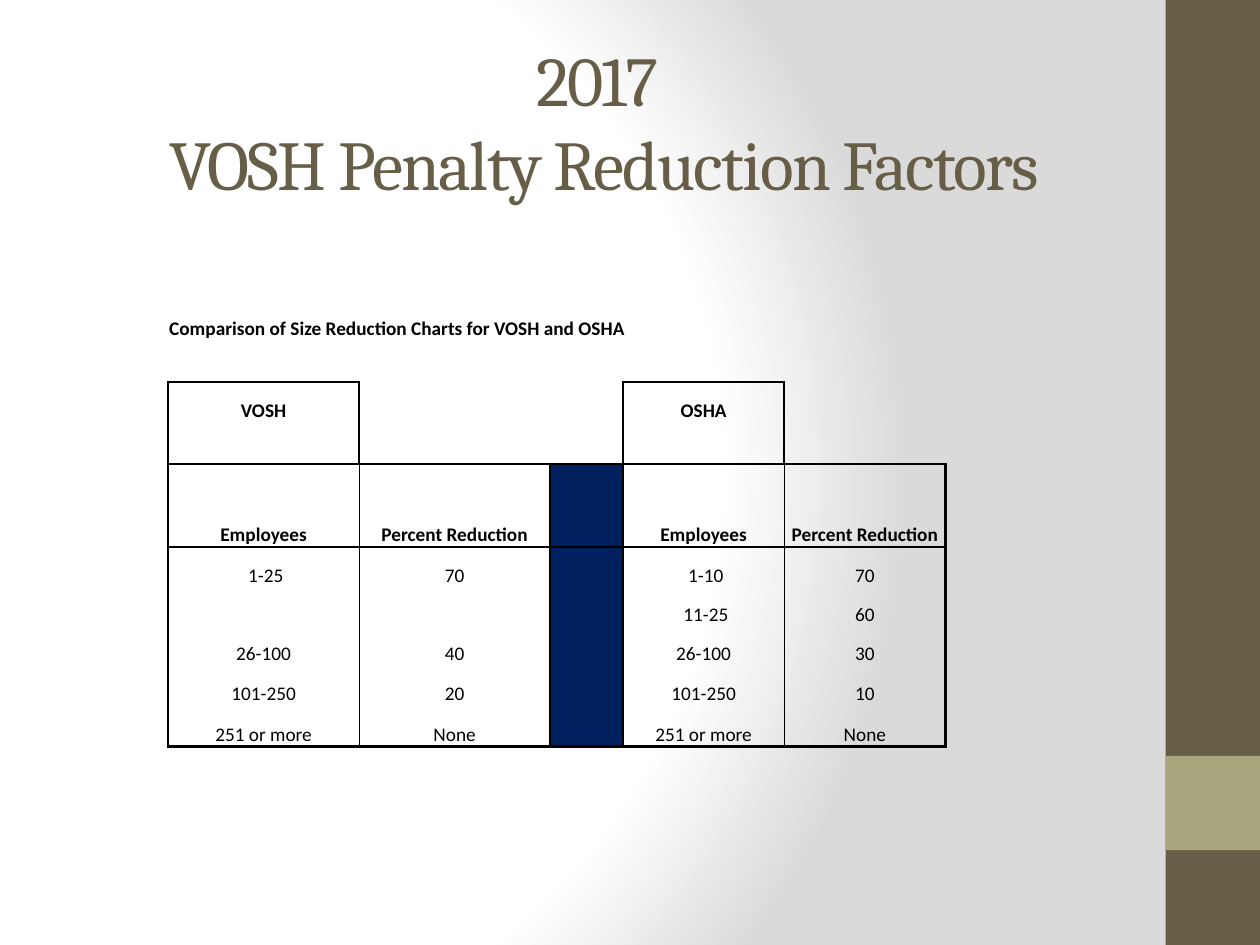
"""Build the slide comparing VOSH and OSHA penalty reduction factors."""

from lxml.etree import SubElement
from pptx import Presentation
from pptx.dml.color import RGBColor
from pptx.enum.shapes import MSO_SHAPE
from pptx.enum.text import MSO_ANCHOR, PP_ALIGN
from pptx.oxml import parse_xml
from pptx.oxml.ns import nsdecls, qn
from pptx.util import Cm, Pt

BROWN = RGBColor(0x67, 0x5E, 0x47)
OLIVE = RGBColor(0xA9, 0xA5, 0x7C)
NAVY = RGBColor(0x00, 0x20, 0x60)
BLACK = RGBColor(0, 0, 0)
WHITE = RGBColor(0xFF, 0xFF, 0xFF)
GREY = RGBColor(0xDA, 0xDA, 0xDA)

THICK, THIN = 1.5, 0.5
NO_GRID_STYLE = "{2D5ABB26-0587-4C30-8999-92F81FD0307C}"
COLUMN_WIDTHS = [3.85, 3.85, 1.47, 3.25, 3.25]
ROW_HEIGHTS = [0.79, 0.79, 0.83, 0.83, 0.83, 1.66, 0.83, 0.79, 0.79, 0.79, 0.83, 0.83]
CAPTION_ROW, AGENCY_ROW, HEADER_ROW, LAST_ROW = 1, 3, 5, 10
DIVIDER_COLUMN = 2
CELL_TEXTS = {
    CAPTION_ROW: ["Comparison of Size Reduction Charts for VOSH and OSHA"],
    AGENCY_ROW: ["VOSH", "", "", "OSHA", ""],
    HEADER_ROW: ["Employees", "Percent Reduction", "", "Employees", "Percent Reduction"],
    6: [" 1-25", "70", "", " 1-10", "70"],
    7: ["", "", "", " 11-25", "60"],
    8: ["26-100", "40", "", "26-100", "30"],
    9: ["101-250", "20", "", "101-250", "10"],
    LAST_ROW: ["251 or more", "None", "", "251 or more", "None"],
}


def vertical_rule(row, edge):
    """Return the line width at a column edge within a row."""
    if AGENCY_ROW <= row < HEADER_ROW:
        return THICK if edge in (0, 1, 3, 4) else 0
    if HEADER_ROW <= row <= LAST_ROW:
        return THIN if edge in (1, 4) else THICK
    return 0


def horizontal_rule(edge, column):
    """Return the line width at a row edge within a column."""
    if edge == AGENCY_ROW:
        return THICK if column in (0, 3) else 0
    return THICK if edge in (HEADER_ROW, HEADER_ROW + 1, LAST_ROW + 1) else 0


class SlideBuilder:
    """Hold the style and the current slide."""

    title_font, body_font = "Cambria", "Calibri"
    title_size, body_size = Pt(40), Pt(11)

    def __init__(self, slide):
        """Keep the slide to draw on."""
        self.slide = slide

    def background(self, stops, focus):
        """Fill the background with a circular gradient."""
        stop_xml = "".join(
            f'<a:gs pos="{position * 1000}"><a:srgbClr val="{color}"/></a:gs>'
            for position, color in stops
        )
        focus_xml = " ".join(f'{side}="{value * 1000}"' for side, value in zip("ltrb", focus))
        self.slide._element.cSld.insert(0, parse_xml(
            f'<p:bg {nsdecls("p", "a")}><p:bgPr><a:gradFill rotWithShape="1">'
            f'<a:gsLst>{stop_xml}</a:gsLst>'
            f'<a:path path="circle"><a:fillToRect {focus_xml}/></a:path>'
            '</a:gradFill><a:effectLst/></p:bgPr></p:bg>'
        ))

    def rectangle(self, left, top, width, height, color):
        """Add a plain filled rectangle."""
        shape = self.slide.shapes.add_shape(
            MSO_SHAPE.RECTANGLE, Cm(left), Cm(top), Cm(width), Cm(height))
        shape.shadow.inherit = False
        shape.fill.solid()
        shape.fill.fore_color.rgb = color
        shape.line.fill.background()

    def run(self, paragraph, text, font_name, size, color, bold=False):
        """Add a styled run to a paragraph."""
        run = paragraph.add_run()
        run.text = text
        run.font.name = font_name
        run.font.size = size
        run.font.color.rgb = color
        run.font.bold = bold
        return run

    def title(self, left, top, width, height, lines):
        """Add the centred title with tightened letters."""
        shape = self.slide.shapes.add_textbox(Cm(left), Cm(top), Cm(width), Cm(height))
        frame = shape.text_frame
        frame.word_wrap = True
        frame.vertical_anchor = MSO_ANCHOR.BOTTOM
        paragraph = frame.paragraphs[0]
        paragraph.alignment = PP_ALIGN.CENTER
        for index, line in enumerate(lines):
            if index:
                paragraph.add_line_break()
            run = self.run(paragraph, line, self.title_font, self.title_size, BROWN)
            run.font._element.set("spc", "-100")

    def border(self, cell, side, width):
        """Draw one cell border, or clear it when the width is zero."""
        line = SubElement(cell._tc.get_or_add_tcPr(), qn(f"a:ln{side}"))
        if width:
            line.set("w", str(Pt(width)))
            fill = SubElement(line, qn("a:solidFill"))
            SubElement(fill, qn("a:srgbClr")).set("val", str(BLACK))
        else:
            SubElement(line, qn("a:noFill"))

    def cell(self, table, row, column):
        """Style one table cell and write its text."""
        cell = table.cell(row, column)
        cell.margin_left = cell.margin_right = cell.margin_top = cell.margin_bottom = 0
        cell.vertical_anchor = MSO_ANCHOR.BOTTOM
        self.border(cell, "L", vertical_rule(row, column))
        self.border(cell, "R", vertical_rule(row, column + 1))
        self.border(cell, "T", horizontal_rule(row, column))
        self.border(cell, "B", horizontal_rule(row + 1, column))
        if column == DIVIDER_COLUMN and HEADER_ROW <= row <= LAST_ROW:
            cell.fill.solid()
            cell.fill.fore_color.rgb = NAVY
        else:
            cell.fill.background()
        texts = CELL_TEXTS.get(row, [])
        if column < len(texts) and texts[column]:
            cell.margin_left = cell.margin_right = cell.margin_top = Cm(0.02)
            paragraph = cell.text_frame.paragraphs[0]
            paragraph.alignment = PP_ALIGN.LEFT if row == CAPTION_ROW else PP_ALIGN.CENTER
            self.run(paragraph, texts[column], self.body_font, self.body_size, BLACK,
                     bold=row <= HEADER_ROW)

    def table(self, left, top):
        """Add the comparison table."""
        frame = self.slide.shapes.add_table(
            len(ROW_HEIGHTS), len(COLUMN_WIDTHS), Cm(left), Cm(top),
            Cm(sum(COLUMN_WIDTHS)), Cm(sum(ROW_HEIGHTS)))
        table = frame.table
        table.first_row = table.horz_banding = False
        table._tbl.tblPr.find(qn("a:tableStyleId")).text = NO_GRID_STYLE
        for column, width in zip(table.columns, COLUMN_WIDTHS):
            column.width = Cm(width)
        for row, height in zip(table.rows, ROW_HEIGHTS):
            row.height = Cm(height)
        for row in range(len(ROW_HEIGHTS)):
            for column in range(len(COLUMN_WIDTHS)):
                self.cell(table, row, column)
        table.cell(CAPTION_ROW, 0).merge(table.cell(CAPTION_ROW, len(COLUMN_WIDTHS) - 1))


def main():
    """Build and save the presentation."""
    presentation = Presentation()
    presentation.slide_width, presentation.slide_height = Cm(25.4), Cm(19.05)
    builder = SlideBuilder(presentation.slides.add_slide(presentation.slide_layouts[6]))
    builder.background([(0, WHITE), (75, WHITE), (100, GREY)], (20, 50, 100, 50))
    builder.rectangle(23.5, 0, 1.9, 19.05, BROWN)
    builder.rectangle(23.5, 15.24, 1.9, 1.9, OLIVE)
    builder.title(1.7, 0.85, 20.96, 3.39, ["2017 ", "VOSH Penalty Reduction Factors"])
    builder.table(3.39, 5.29)
    presentation.save("out.pptx")


if __name__ == "__main__":
    main()
